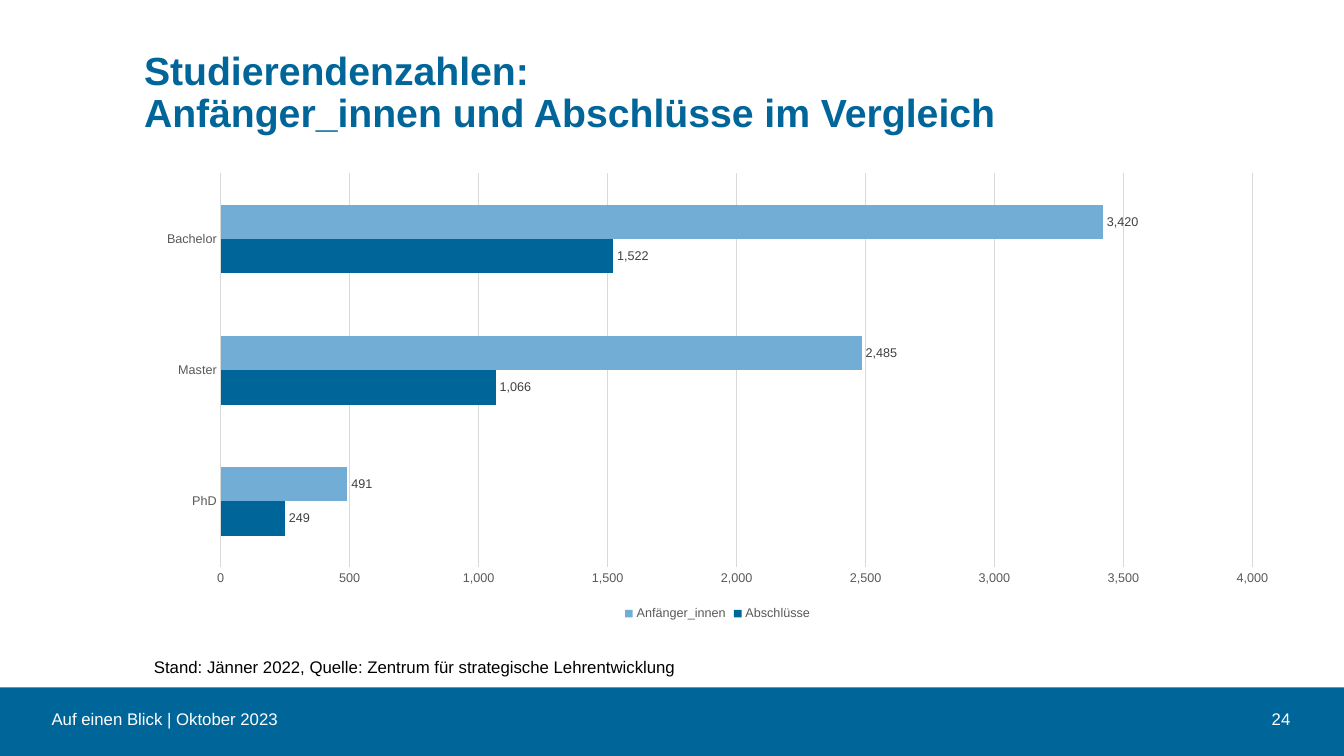
from lxml.etree import SubElement
from pptx import Presentation
from pptx.chart.data import CategoryChartData as ChartData
from pptx.dml.color import RGBColor
from pptx.enum.chart import XL_CHART_TYPE as ChartType
from pptx.enum.chart import XL_LABEL_POSITION as LabelPos
from pptx.enum.chart import XL_LEGEND_POSITION as LegendPos
from pptx.enum.chart import XL_TICK_MARK as TickMark
from pptx.enum.shapes import MSO_SHAPE as Shape
from pptx.enum.text import MSO_ANCHOR as Anchor
from pptx.enum.text import PP_ALIGN as Align
from pptx.util import Cm, Pt

FONT = "Arial"
BLUE, LIGHT_BLUE, WHITE, BLACK = "006699", "72ADD5", "FFFFFF", "000000"
GRID, AXIS_TEXT, LABEL_TEXT = "D9D9D9", "595959", "404040"
LEFT = 3.63
NUMBER_FORMAT = "#,##0"

DEGREES = ["PhD", "Master", "Bachelor"]
STUDENT_NUMBERS = [
    ("Abschlüsse", [249, 1066, 1522], BLUE),
    ("Anfänger_innen", [491, 2485, 3420], LIGHT_BLUE),
]


def rgb(color):
    return RGBColor.from_string(color)


def style_font(font, size, color, bold=False):
    font.name, font.size, font.bold = FONT, Pt(size), bold
    font.color.rgb = rgb(color)


def place(left, top, width, height):
    return Cm(left), Cm(top), Cm(width), Cm(height)


def add_text(slide, box, lines, size, color, bold=False, align=Align.LEFT,
             anchor=Anchor.TOP, inset=(0, 0), spacing=None):
    frame = slide.shapes.add_textbox(*place(*box)).text_frame
    frame.word_wrap = True
    frame.vertical_anchor = anchor
    frame.margin_left = frame.margin_right = Cm(inset[0])
    frame.margin_top = frame.margin_bottom = Cm(inset[1])
    paragraph = frame.paragraphs[0]
    paragraph.alignment = align
    paragraph.line_spacing = spacing
    for number, line in enumerate(lines):
        if number:
            paragraph.add_line_break()
        run = paragraph.add_run()
        run.text = line
        style_font(run.font, size, color, bold)


def add_band(slide, box, color):
    band = slide.shapes.add_shape(Shape.RECTANGLE, *place(*box))
    band.shadow.inherit = False
    band.fill.solid()
    band.fill.fore_color.rgb = rgb(color)
    band.line.fill.background()


def style_line(line, color):
    line.color.rgb = rgb(color)
    line.width = Pt(0.75)


def style_axis(axis):
    axis.major_tick_mark = axis.minor_tick_mark = TickMark.NONE
    style_font(axis.tick_labels.font, 9, AXIS_TEXT)


def style_series(series, color):
    series.format.fill.solid()
    series.format.fill.fore_color.rgb = rgb(color)
    series.invert_if_negative = False
    labels = series.data_labels
    labels.show_value = True
    labels.position = LabelPos.OUTSIDE_END
    labels.number_format = NUMBER_FORMAT
    labels.number_format_is_linked = False
    style_font(labels.font, 9, LABEL_TEXT)


def add_bar_chart(slide, box):
    numbers = ChartData(number_format=NUMBER_FORMAT)
    numbers.categories = DEGREES
    for name, values, _ in STUDENT_NUMBERS:
        numbers.add_series(name, values)
    chart = slide.shapes.add_chart(
        ChartType.BAR_CLUSTERED, *place(*box), numbers).chart
    style_font(chart.font, 10, BLACK)
    chart.has_title = False

    # Bars
    plot = chart.plots[0]
    plot.gap_width = 182
    plot.vary_by_categories = False
    for series, (_, _, color) in zip(plot.series, STUDENT_NUMBERS):
        style_series(series, color)

    # Axes
    degrees, students = chart.category_axis, chart.value_axis
    style_axis(degrees)
    style_line(degrees.format.line, GRID)
    style_axis(students)
    students.format.line.fill.background()
    students.minimum_scale, students.maximum_scale = 0, 4000
    students.major_unit = 500
    students.has_major_gridlines = True
    style_line(students.major_gridlines.format.line, GRID)
    students.tick_labels.number_format = NUMBER_FORMAT
    students.tick_labels.number_format_is_linked = False

    # Legend
    chart.has_legend = True
    chart.legend.position = LegendPos.BOTTOM
    chart.legend.include_in_layout = False
    style_font(chart.legend.font, 9, AXIS_TEXT)


def main():
    deck = Presentation()
    deck.slide_width, deck.slide_height = Cm(33.87), Cm(19.05)
    slide = deck.slides.add_slide(deck.slide_layouts[6])

    # Footer band
    add_band(slide, (0, 17.32, 33.87, 1.73), BLUE)

    # Comparison of beginners and graduates
    add_bar_chart(slide, (LEFT, 4.14, 28.91, 11.61))

    # Title
    add_text(slide, (LEFT, 1.3, 25.81, 2.31),
             ["Studierendenzahlen:",
              "Anfänger_innen und Abschlüsse im Vergleich"],
             28, BLUE, bold=True, spacing=0.9)

    # Footer and page number
    add_text(slide, (1.3, 17.73, 28.14, 0.79),
             ["Auf einen Blick | Oktober 2023"], 12, WHITE,
             anchor=Anchor.MIDDLE)
    add_text(slide, (30.23, 17.73, 2.29, 0.79), ["24"], 12, WHITE,
             align=Align.RIGHT, anchor=Anchor.MIDDLE)

    # Source note
    add_text(slide, (LEFT, 16.43, 17.04, 0.76),
             ["Stand: Jänner 2022, Quelle: Zentrum für strategische "
              "Lehrentwicklung"], 12, BLACK, inset=(0.25, 0.13))

    deck.save("out.pptx")


if __name__ == "__main__":
    main()
